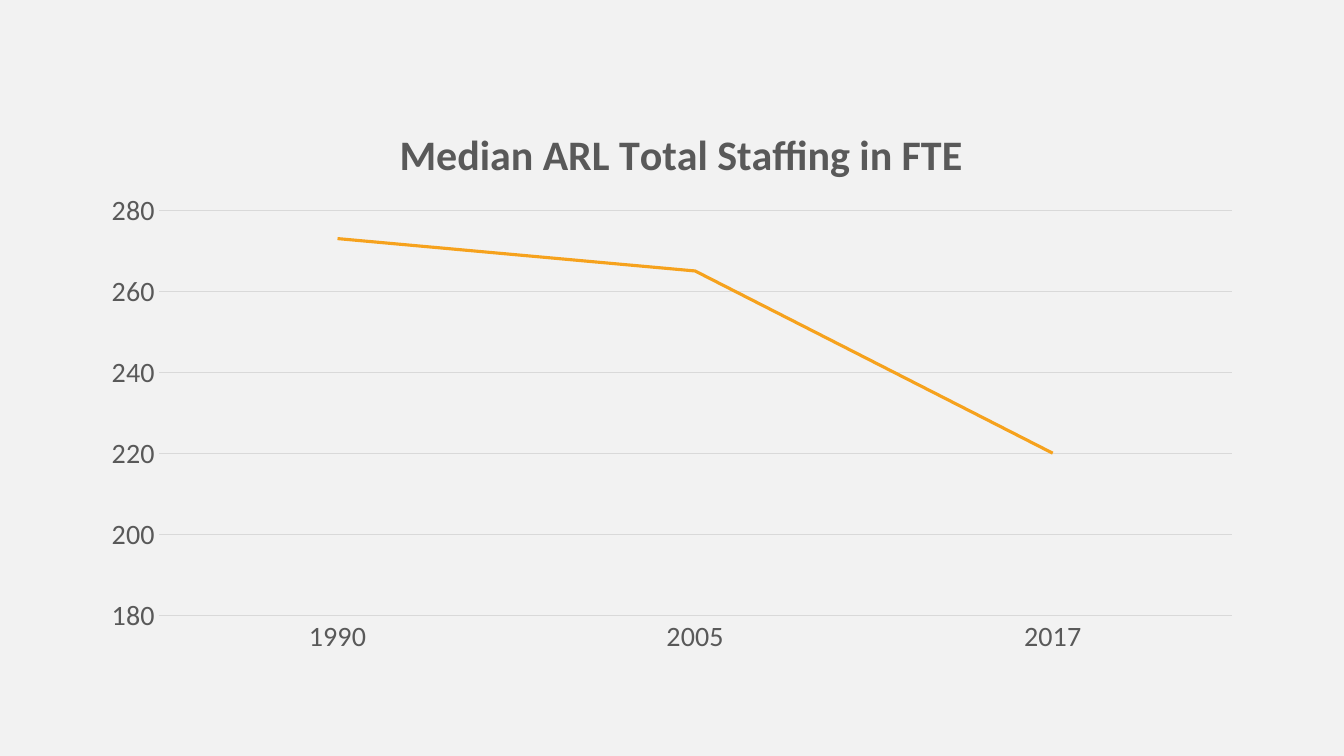
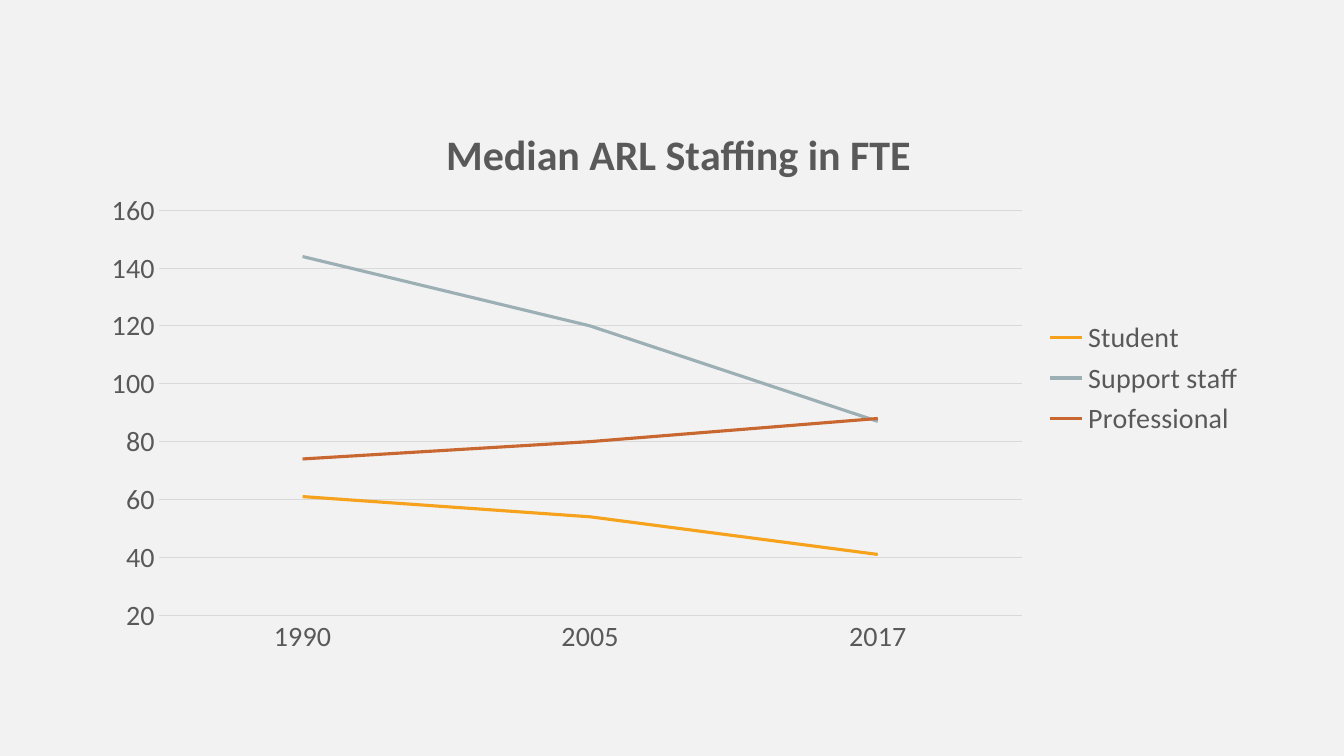
import dataclasses

import lxml.etree
import pptx
import pptx.chart.chart
import pptx.chart.data
import pptx.dml.color
import pptx.dml.line
import pptx.enum.chart
import pptx.oxml.ns
import pptx.presentation
import pptx.text.text
import pptx.util

FONT = "Calibri"
BACKGROUND = "F2F2F2"
TEXT = "595959"
GRID = "D9D9D9"
ORANGE, GREY_BLUE, RUST = "F6A21D", "9BAFB5", "C96731"

LABEL_SIZE = 20
TITLE_SIZE = 30
YEARS = ("1990", "2005", "2017")
CHART_BOX = (63.4, 63.4, 833, 413.3)  # left, top, width, height
PLOT_LEFT, PLOT_TOP, PLOT_HEIGHT = 0.06, 0.21, 0.7  # shares of the chart
TITLE_TOP = 0.05


@dataclasses.dataclass(frozen=True)
class Series:
    name: str
    values: tuple[int, ...]
    color: str


@dataclasses.dataclass(frozen=True)
class ChartPage:
    title: str
    title_left: float
    plot_width: float
    minimum: int
    maximum: int
    series: tuple[Series, ...]


PAGES = (
    ChartPage("Median ARL Total Staffing in FTE", 0.26, 0.92, 180, 280, (
        Series("Series 1", (273, 265, 220), ORANGE),
    )),
    ChartPage("Median ARL Staffing in FTE", 0.3, 0.74, 20, 160, (
        Series("Student", (61, 54, 41), ORANGE),
        Series("Support staff", (144, 120, 87), GREY_BLUE),
        Series("Professional", (74, 80, 88), RUST),
    )),
)


def rgb(color: str) -> pptx.dml.color.RGBColor:
    return pptx.dml.color.RGBColor.from_string(color)


def style_font(font: pptx.text.text.Font, size: float, bold: bool = False) -> None:
    font.name = FONT
    font.size = pptx.util.Pt(size)
    font.bold = bold
    font.color.rgb = rgb(TEXT)


def style_line(line: pptx.dml.line.LineFormat, color: str, width: float) -> None:
    line.color.rgb = rgb(color)
    line.width = pptx.util.Pt(width)


def set_layout(parent: lxml.etree._Element, index: int, **settings: object) -> None:
    """Give a chart part a manual layout, as shares of the chart."""
    qn = pptx.oxml.ns.qn
    for old in parent.findall(qn("c:layout")):
        parent.remove(old)
    layout = lxml.etree.Element(qn("c:layout"))
    manual = lxml.etree.SubElement(layout, qn("c:manualLayout"))
    for name, value in settings.items():
        lxml.etree.SubElement(manual, qn(f"c:{name}")).set("val", str(value))
    parent.insert(index, layout)


def style_title(chart: pptx.chart.chart.Chart, page: ChartPage) -> None:
    chart.has_title = True
    title = chart.chart_title
    span = title.text_frame.paragraphs[0].add_run()
    span.text = page.title
    style_font(span.font, TITLE_SIZE, bold=True)
    title.include_in_layout = False
    set_layout(title._element, 1, xMode="edge", yMode="edge",
               x=page.title_left, y=TITLE_TOP)


def style_axes(chart: pptx.chart.chart.Chart, page: ChartPage) -> None:
    for axis in (chart.category_axis, chart.value_axis):
        axis.major_tick_mark = pptx.enum.chart.XL_TICK_MARK.NONE
        axis.minor_tick_mark = pptx.enum.chart.XL_TICK_MARK.NONE
        style_font(axis.tick_labels.font, LABEL_SIZE)
    style_line(chart.category_axis.format.line, GRID, 0.75)
    values = chart.value_axis
    values.minimum_scale, values.maximum_scale = page.minimum, page.maximum
    values.major_unit = 20
    values.format.line.fill.background()
    values.has_major_gridlines = True
    style_line(values.major_gridlines.format.line, GRID, 0.75)


def add_chart_page(deck: pptx.presentation.Presentation, page: ChartPage) -> None:
    slide = deck.slides.add_slide(deck.slide_layouts[6])
    slide.background.fill.solid()
    slide.background.fill.fore_color.rgb = rgb(BACKGROUND)

    # Chart and data
    data = pptx.chart.data.CategoryChartData()
    data.categories = YEARS
    for series in page.series:
        data.add_series(series.name, series.values)
    chart = slide.shapes.add_chart(
        pptx.enum.chart.XL_CHART_TYPE.LINE, *map(pptx.util.Pt, CHART_BOX), data
    ).chart
    style_font(chart.font, LABEL_SIZE)
    style_title(chart, page)
    style_axes(chart, page)

    # Lines
    plot = chart.plots[0]
    plot.vary_by_categories = False
    for line, series in zip(plot.series, page.series):
        line.smooth = False
        line.marker.style = pptx.enum.chart.XL_MARKER_STYLE.NONE
        style_line(line.format.line, series.color, 2.25)

    # Legend and plot area
    chart.has_legend = len(page.series) > 1
    if chart.has_legend:
        chart.legend.position = pptx.enum.chart.XL_LEGEND_POSITION.RIGHT
        chart.legend.include_in_layout = False
        style_font(chart.legend.font, LABEL_SIZE)
    plot_area = chart._chartSpace.chart.plotArea
    set_layout(plot_area, 0, layoutTarget="inner", xMode="edge", yMode="edge",
               x=PLOT_LEFT, y=PLOT_TOP, w=page.plot_width, h=PLOT_HEIGHT)


def main() -> None:
    deck = pptx.Presentation()
    deck.slide_width, deck.slide_height = pptx.util.Pt(960), pptx.util.Pt(540)
    for page in PAGES:
        add_chart_page(deck, page)
    deck.save("out.pptx")


if __name__ == "__main__":
    main()
